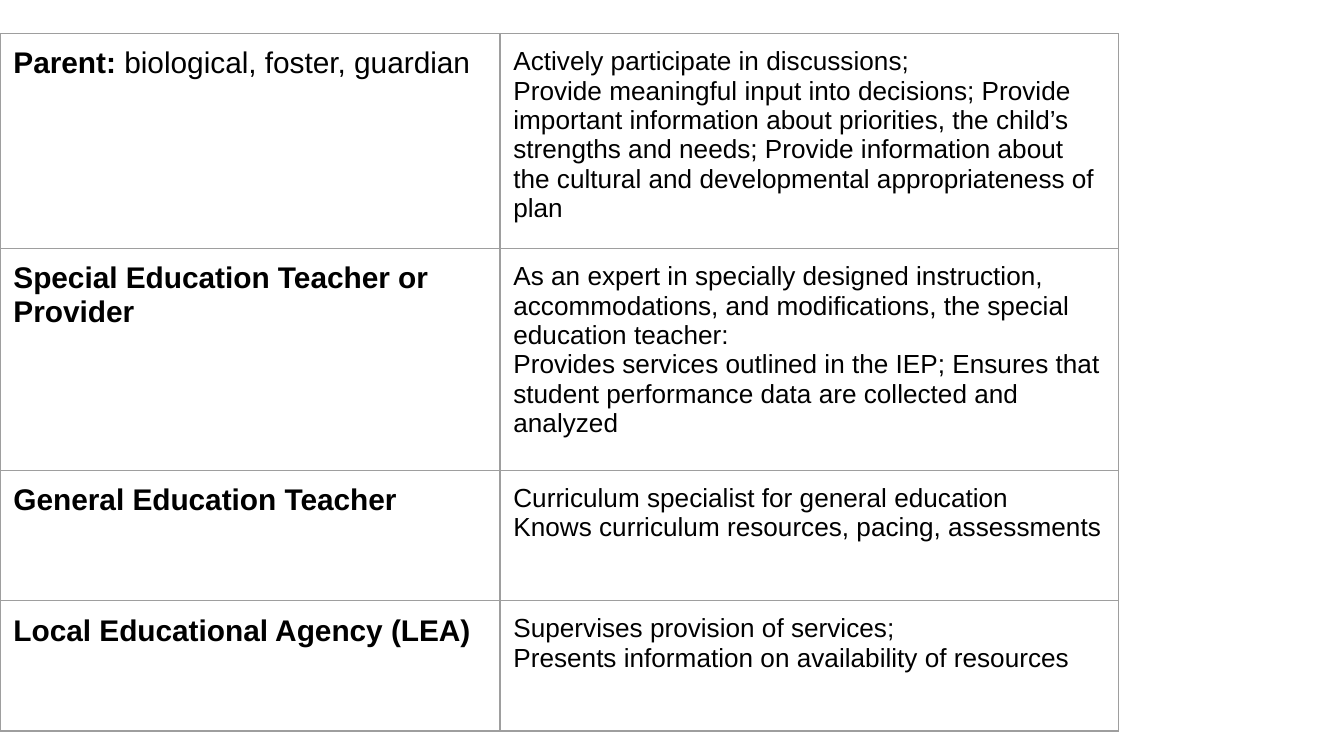
"""Build a slide with a table of IEP team members and their roles."""
from typing import NamedTuple

from lxml.etree import SubElement
from pptx import Presentation
from pptx.dml.color import RGBColor
from pptx.oxml.ns import qn
from pptx.table import _Cell
from pptx.util import Inches, Pt

BLACK = RGBColor(0x00, 0x00, 0x00)
BORDER_GRAY = RGBColor(0x9E, 0x9E, 0x9E)
FONT_NAME = "Arial"
COLUMN_WIDTHS = (3.72, 4.6)


class Member(NamedTuple):
    title: str
    detail: str
    duties: tuple[str, ...]
    height: float


MEMBERS = (
    Member(
        "Parent:",
        " biological, foster, guardian",
        (
            "Actively participate in discussions;",
            "Provide meaningful input into decisions; Provide important information "
            "about priorities, the child’s strengths and needs; Provide information "
            "about the cultural and developmental appropriateness of plan",
        ),
        1.6,
    ),
    Member(
        "Special Education Teacher or Provider",
        "",
        (
            "As an expert in specially designed instruction, accommodations, and "
            "modifications, the special education teacher:",
            "Provides services outlined in the IEP; Ensures that student performance "
            "data are collected and analyzed",
        ),
        1.65,
    ),
    Member(
        "General Education Teacher",
        "",
        (
            "Curriculum specialist for general education",
            "Knows curriculum resources, pacing, assessments",
        ),
        0.97,
    ),
    Member(
        "Local Educational Agency (LEA)",
        "",
        (
            "Supervises provision of services;",
            "Presents information on availability of resources",
        ),
        0.97,
    ),
)


def add_borders(cell: _Cell) -> None:
    """Draw a thin gray line on all four sides of a cell."""
    properties = cell._tc.get_or_add_tcPr()
    for position, side in enumerate(("lnL", "lnR", "lnT", "lnB")):
        line = SubElement(properties, qn(f"a:{side}"), w=str(Pt(0.75)))
        fill = SubElement(line, qn("a:solidFill"))
        SubElement(fill, qn("a:srgbClr"), val=str(BORDER_GRAY))
        properties.insert(position, line)


def fill_cell(cell: _Cell, paragraphs: list[list[str]], size: int, bold_first: bool) -> None:
    """Write the runs of each paragraph and format the cell."""
    cell.margin_left = cell.margin_right = Inches(0.1)
    cell.margin_top = cell.margin_bottom = Inches(0.1)
    cell.fill.background()
    add_borders(cell)
    frame = cell.text_frame
    frame.text = "\n".join(texts[0] for texts in paragraphs)
    for paragraph, texts in zip(frame.paragraphs, paragraphs):
        for text in texts[1:]:
            paragraph.add_run().text = text
        for index, run in enumerate(paragraph.runs):
            run.font.name = FONT_NAME
            run.font.size = Pt(size)
            run.font.bold = bold_first and index == 0
            run.font.color.rgb = BLACK


def main() -> None:
    """Create the presentation and save it."""
    presentation = Presentation()
    presentation.slide_width = Inches(10)
    presentation.slide_height = Inches(10 * 9 / 16)
    slide = presentation.slides.add_slide(presentation.slide_layouts[6])

    table = slide.shapes.add_table(
        len(MEMBERS),
        len(COLUMN_WIDTHS),
        Inches(0),
        Inches(0.25),
        Inches(sum(COLUMN_WIDTHS)),
        Inches(sum(member.height for member in MEMBERS)),
    ).table
    table.first_row = False
    table.horz_banding = False
    for column, width in zip(table.columns, COLUMN_WIDTHS):
        column.width = Inches(width)
    for row, member in zip(table.rows, MEMBERS):
        row.height = Inches(member.height)
        role_cell, duties_cell = row.cells
        role = [text for text in (member.title, member.detail) if text]
        fill_cell(role_cell, [role], 16, True)
        fill_cell(duties_cell, [[duty] for duty in member.duties], 14, False)

    presentation.save("out.pptx")


if __name__ == "__main__":
    main()
